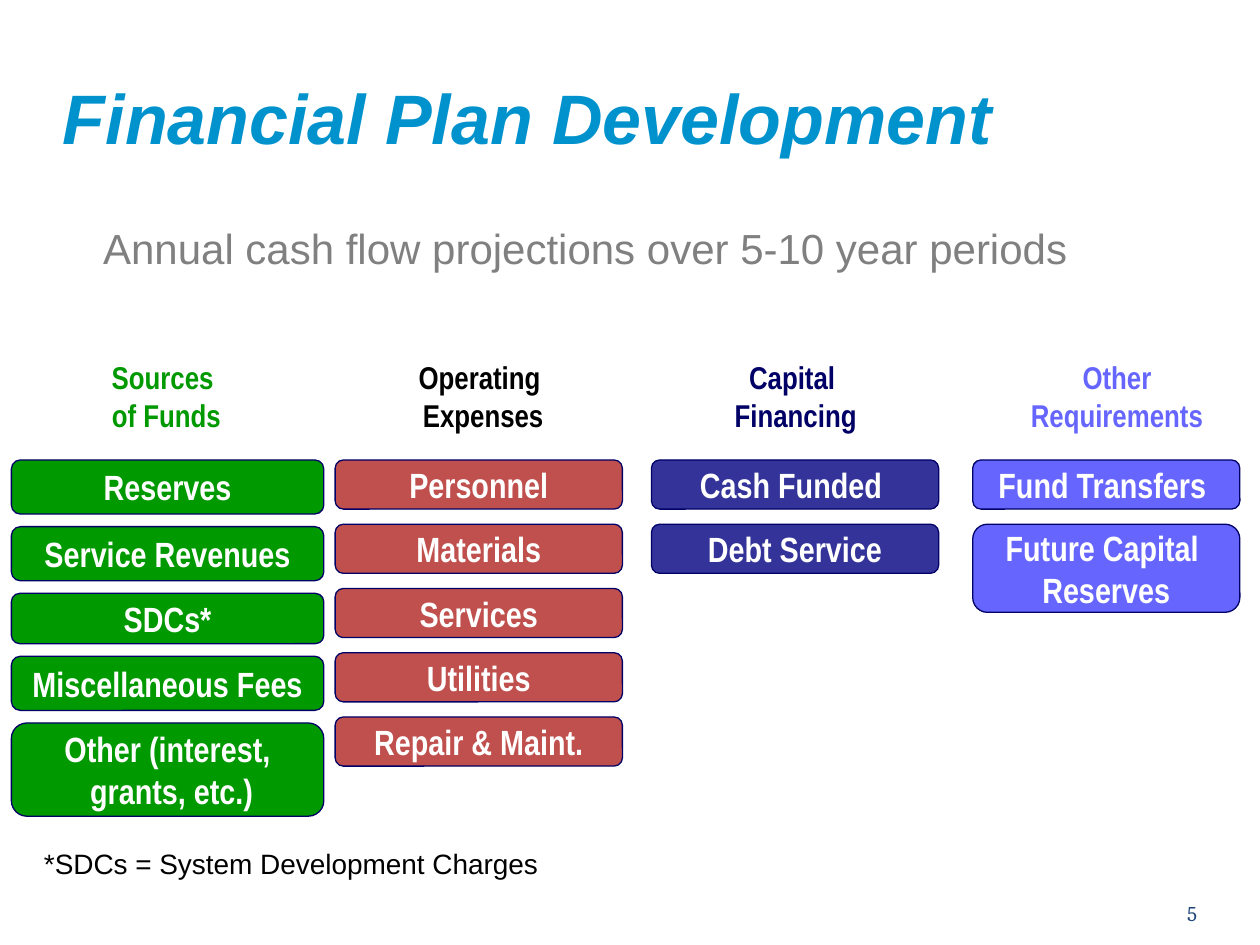
from lxml.etree import SubElement
from pptx import Presentation
from pptx.dml.color import RGBColor
from pptx.enum.shapes import MSO_SHAPE as Shape
from pptx.enum.text import MSO_ANCHOR as Anchor, PP_ALIGN as Align
from pptx.oxml.ns import qn
from pptx.util import Inches, Pt

# Content
TITLE = "Financial Plan Development"
BULLET = "Annual cash flow projections over 5-10 year periods"
FOOTNOTE = "*SDCs = System Development Charges"
PAGE_NUMBER = "5"

COLORS = {
    "title": "0092CC", "body": "808080", "black": "000000", "white": "FFFFFF",
    "green": "009900", "red": "C0504D", "navy": "000066", "indigo": "333399",
    "violet": "6666FF", "page": "1D4577",
}

# All lengths are percentages of the slide's width or height
HEADING_TOP, HEADING_HEIGHT = 37.2, 12
BOX_TOP = 48.67
ROW, SHORT_GREEN, GREEN = 5.2, 5.33, 5.73

COLUMNS = [
    dict(heading=["Sources ", "of Funds"], heading_color="green", fill="green",
         heading_left=6.4, heading_width=13.6, left=0.9, width=24.8, gap=1.33,
         boxes=[(["Reserves"], GREEN), (["Service Revenues"], GREEN),
                (["SDCs*"], SHORT_GREEN), (["Miscellaneous Fees"], GREEN),
                (["Other (interest,", " grants, etc.)"], 9.87)]),
    dict(heading=["Operating ", "Expenses"], heading_color="black", fill="red",
         heading_left=30.5, heading_width=15.7, left=26.6, width=22.8, gap=1.6,
         boxes=[(["Personnel"], ROW), (["Materials"], ROW), (["Services"], ROW),
                (["Utilities"], ROW), (["Repair & Maint."], ROW)]),
    dict(heading=["Capital ", "Financing"], heading_color="navy", fill="indigo",
         heading_left=55.7, heading_width=14.9, left=51.7, width=22.8, gap=1.6,
         boxes=[(["Cash Funded "], ROW), (["Debt Service"], ROW)]),
    dict(heading=["Other", "Requirements"], heading_color="violet", fill="violet",
         heading_left=78.5, heading_width=20.3, left=77.2, width=21.2, gap=1.6,
         boxes=[(["Fund Transfers "], ROW),
                (["Future Capital ", "Reserves"], 9.33)]),
]

presentation = Presentation()
presentation.slide_width, presentation.slide_height = Inches(10), Inches(7.5)
slide = presentation.slides.add_slide(presentation.slide_layouts[6])


def color(name):
    return RGBColor.from_string(COLORS[name])


def place(left, top, width, height):
    across, down = presentation.slide_width / 100, presentation.slide_height / 100
    return [round(n) for n in (left * across, top * down, width * across, height * down)]


def write(shape, lines, size, font, ink, bold=False, align=Align.LEFT,
          anchor=Anchor.TOP, wrap=True):
    frame = shape.text_frame
    frame.word_wrap, frame.vertical_anchor = wrap, anchor
    frame.text = "\n".join(lines)
    for paragraph in frame.paragraphs:
        paragraph.alignment = align
        paragraph.font.size, paragraph.font.name = Pt(size), font
        paragraph.font.bold, paragraph.font.color.rgb = bold, color(ink)
    return frame


def add_text(area, *args, **style):
    return write(slide.shapes.add_textbox(*place(*area)), *args, **style)


def add_box(area, lines, fill):
    box = slide.shapes.add_shape(Shape.ROUNDED_RECTANGLE, *place(*area))
    box.shadow.inherit = False
    box.fill.solid()
    box.fill.fore_color.rgb = color(fill)
    box.line.color.rgb, box.line.width = color("navy"), Pt(0.75)
    write(box, lines, 20, "Arial Narrow", "white", bold=True,
          align=Align.CENTER, anchor=Anchor.MIDDLE, wrap=False)


def add_bullet(paragraph):
    properties = paragraph._p.get_or_add_pPr()
    properties.set("marL", str(Inches(0.3)))
    properties.set("indent", str(-Inches(0.3)))
    bullet_color = SubElement(properties, qn("a:buClr"))
    SubElement(bullet_color, qn("a:srgbClr"), val=COLORS["title"])
    SubElement(properties, qn("a:buSzPct"), val="95000")
    SubElement(properties, qn("a:buFont"), typeface="Arial")
    SubElement(properties, qn("a:buChar"), char="●")


# Title and bullet
title = add_text((5, 0, 90, 16.67), [TITLE], 40, "Arial", "title",
                 bold=True, anchor=Anchor.BOTTOM)
title.margin_left = title.margin_right = title.margin_bottom = 0
title.paragraphs[0].font.italic = True
title.paragraphs[0].line_spacing = 0.8

body = slide.shapes.add_textbox(*place(7.2, 23.47, 85, 9.6))
add_bullet(body.text_frame.paragraphs[0])
write(body, [BULLET], 24, "Arial", "body")
body.text_frame.paragraphs[0].line_spacing = 0.9

# Columns: a heading above a stack of boxes
for column in COLUMNS:
    add_text((column["heading_left"], HEADING_TOP, column["heading_width"], HEADING_HEIGHT),
             column["heading"], 18, "Arial Narrow", column["heading_color"],
             bold=True, align=Align.CENTER, wrap=False)
    top = BOX_TOP
    for lines, height in column["boxes"]:
        add_box((column["left"], top, column["width"], height), lines, column["fill"])
        top += height + column["gap"]

# Footnote and page number
add_text((2.5, 88.93, 46.9, 4.93), [FOOTNOTE], 16, "Arial", "black")
number = add_text((86.7, 92.67, 8.3, 5.33), [PAGE_NUMBER], 12, "Cambria", "page",
                  align=Align.RIGHT, anchor=Anchor.BOTTOM)
number.margin_left = number.margin_top = number.margin_right = number.margin_bottom = 0

presentation.save("out.pptx")
